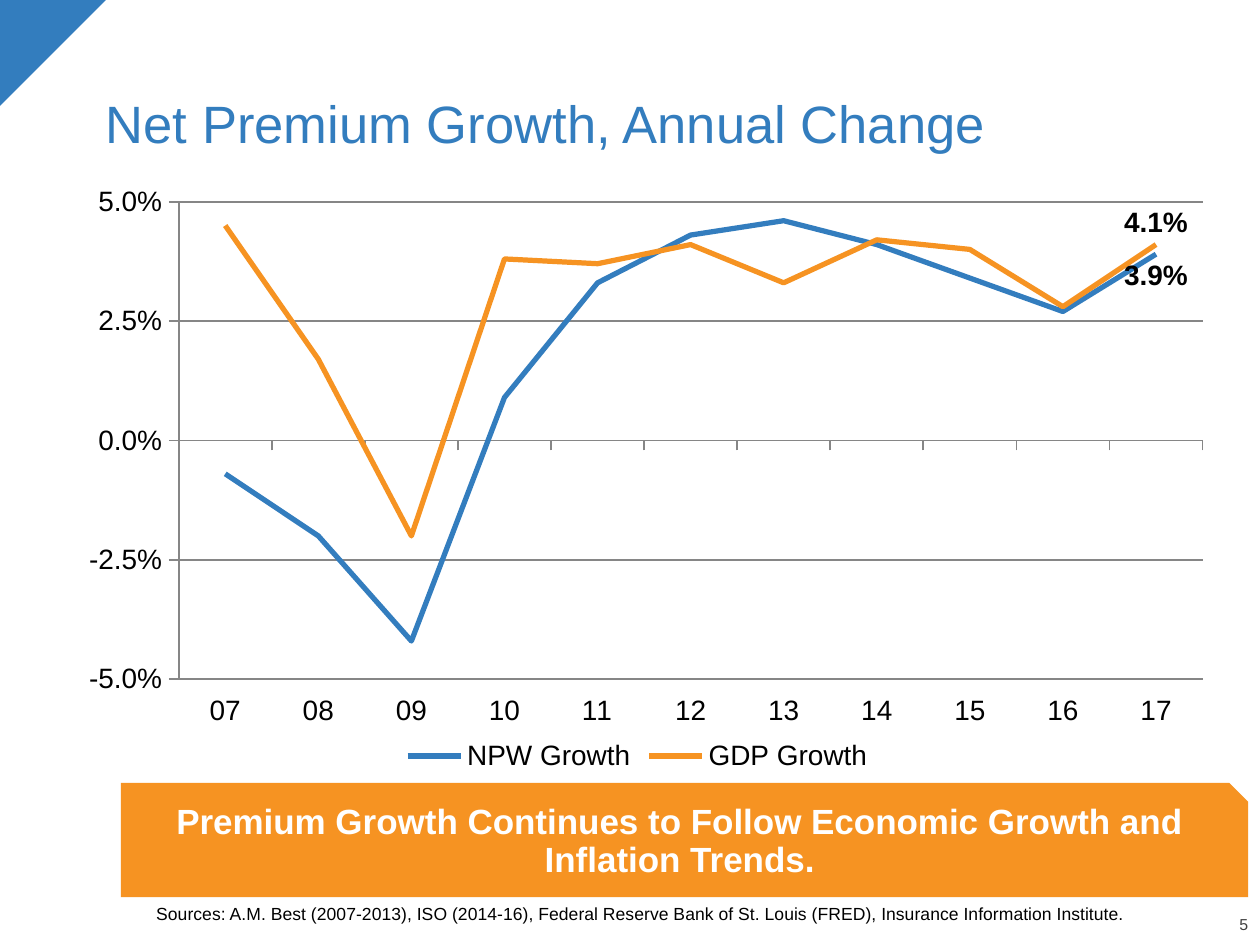
from typing import NamedTuple

from lxml import etree
from pptx import Presentation
from pptx.chart.data import CategoryChartData
from pptx.dml.color import RGBColor
from pptx.enum.chart import (XL_CHART_TYPE, XL_LABEL_POSITION, XL_LEGEND_POSITION,
                             XL_TICK_LABEL_POSITION, XL_TICK_MARK)
from pptx.enum.shapes import MSO_SHAPE
from pptx.enum.text import MSO_ANCHOR, PP_ALIGN
from pptx.oxml.ns import qn
from pptx.util import Inches, Pt

LINE_CHART = XL_CHART_TYPE.LINE
ABOVE, BELOW = XL_LABEL_POSITION.ABOVE, XL_LABEL_POSITION.BELOW
LEGEND_BOTTOM = XL_LEGEND_POSITION.BOTTOM
LABELS_LOW = XL_TICK_LABEL_POSITION.LOW
TICK_OUTSIDE = XL_TICK_MARK.OUTSIDE
RIGHT_TRIANGLE, SNIPPED = MSO_SHAPE.RIGHT_TRIANGLE, MSO_SHAPE.SNIP_1_RECTANGLE
MIDDLE, BOTTOM = MSO_ANCHOR.MIDDLE, MSO_ANCHOR.BOTTOM
LEFT, CENTER, RIGHT = PP_ALIGN.LEFT, PP_ALIGN.CENTER, PP_ALIGN.RIGHT

FONT = "Arial"
COLORS = {"blue": "337DBE", "orange": "F69322", "black": "000000",
          "white": "FFFFFF", "gray": "404040", "axis": "868686"}
PERCENT = "0.0%"
YEARS = [f"{year:02d}" for year in range(7, 18)]
PLOT_AREA = {"x": 0.107, "y": 0.063, "w": 0.877, "h": 0.777}


class Box(NamedTuple):
    left: float
    top: float
    width: float
    height: float

    def lengths(self) -> list:
        return [Inches(value) for value in self]


class TextStyle(NamedTuple):
    size: float
    color: str
    align: PP_ALIGN = LEFT
    anchor: MSO_ANCHOR = BOTTOM
    bold: bool = False
    margins: tuple = (0, 0, 0, 0)


class GrowthSeries(NamedTuple):
    name: str
    values: tuple
    color: str
    label_position: XL_LABEL_POSITION


GROWTH = [
    GrowthSeries("NPW Growth", (-0.007, -0.02, -0.042, 0.009, 0.033, 0.043,
                                0.046, 0.041, 0.034, 0.027, 0.039), "blue", BELOW),
    GrowthSeries("GDP Growth", (0.045, 0.017, -0.02, 0.038, 0.037, 0.041,
                                0.033, 0.042, 0.04, 0.028, 0.041), "orange", ABOVE),
]


def rgb(name: str) -> RGBColor:
    return RGBColor.from_string(COLORS[name])


def set_font(font, size: float, color: str, bold: bool = False) -> None:
    font.name, font.size, font.bold = FONT, Pt(size), bold
    font.color.rgb = rgb(color)


def write_text(shape, text: str, style: TextStyle) -> None:
    frame = shape.text_frame
    frame.text = text
    frame.word_wrap = True
    frame.vertical_anchor = style.anchor
    (frame.margin_left, frame.margin_top,
     frame.margin_right, frame.margin_bottom) = map(Inches, style.margins)
    paragraph = frame.paragraphs[0]
    paragraph.alignment = style.align
    paragraph.line_spacing = 0.9
    paragraph.space_before = Pt(0)
    set_font(paragraph.font, style.size, style.color, style.bold)


def add_filled_shape(slide, kind: MSO_SHAPE, box: Box, color: str):
    shape = slide.shapes.add_shape(kind, *box.lengths())
    shape.shadow.inherit = False
    shape.fill.solid()
    shape.fill.fore_color.rgb = rgb(color)
    shape.line.fill.background()
    return shape


def fix_plot_area(chart) -> None:
    """Pin the inner plot area to fractions of the chart frame."""
    plot_area = chart.plots[0]._element.getparent()
    for layout in plot_area.findall(qn("c:layout")):
        plot_area.remove(layout)
    layout = etree.Element(qn("c:layout"))
    manual = etree.SubElement(layout, qn("c:manualLayout"))
    settings = {"layoutTarget": "inner", "xMode": "edge", "yMode": "edge", **PLOT_AREA}
    for tag, value in settings.items():
        etree.SubElement(manual, qn(f"c:{tag}")).set("val", str(value))
    plot_area.insert(0, layout)


def format_axes(chart) -> None:
    value_axis, category_axis = chart.value_axis, chart.category_axis
    value_axis.minimum_scale, value_axis.maximum_scale = -0.05, 0.05
    value_axis.major_unit = 0.025
    value_axis.has_major_gridlines = True
    value_axis.tick_labels.number_format = PERCENT
    value_axis.tick_labels.number_format_is_linked = False
    category_axis.tick_label_position = LABELS_LOW
    for axis in (value_axis, category_axis):
        axis.major_tick_mark = TICK_OUTSIDE
        set_font(axis.tick_labels.font, 12, "black")
    for line in (value_axis.format.line, category_axis.format.line,
                 value_axis.major_gridlines.format.line):
        line.color.rgb = rgb("axis")
        line.width = Pt(0.75)


def add_growth_chart(slide, box: Box) -> None:
    data = CategoryChartData(number_format=PERCENT)
    data.categories = YEARS
    for growth in GROWTH:
        data.add_series(growth.name, growth.values)
    chart = slide.shapes.add_chart(LINE_CHART, *box.lengths(), data).chart
    set_font(chart.font, 18, "black")
    chart.has_title = False
    chart.has_legend = True
    chart.legend.position = LEGEND_BOTTOM
    chart.legend.include_in_layout = False
    set_font(chart.legend.font, 12, "black")
    chart.plots[0].vary_by_categories = False
    for series, growth in zip(chart.plots[0].series, GROWTH):
        series.smooth = False
        series.format.line.color.rgb = rgb(growth.color)
        series.format.line.width = Pt(2.25)
        label = series.points[len(YEARS) - 1].data_label
        set_font(label.font, 12, "black", bold=True)
        label.position = growth.label_position
    format_axes(chart)
    fix_plot_area(chart)


def main() -> None:
    presentation = Presentation()
    presentation.slide_width = Inches(7.5)
    presentation.slide_height = presentation.slide_width * 3 // 4
    slide = presentation.slides.add_slide(presentation.slide_layouts[5])

    corner = add_filled_shape(slide, RIGHT_TRIANGLE, Box(0, 0, 0.63, 0.63), "blue")
    corner.rotation = 90

    title = slide.shapes.title
    title.left, title.top, title.width, title.height = Box(0.53, 0.19, 5.73, 0.78).lengths()
    write_text(title, "Net Premium Growth, Annual Change",
               TextStyle(22.5, "blue", margins=(0.1, 0.05, 0.1, 0.05)))

    add_growth_chart(slide, Box(0.32, 0.97, 6.95, 3.66))

    banner = add_filled_shape(slide, SNIPPED, Box(0.72, 4.66, 6.71, 0.68), "orange")
    write_text(banner,
               "Premium Growth Continues to Follow Economic Growth and Inflation Trends.",
               TextStyle(15, "white", CENTER, MIDDLE, True, (0.07, 0.04, 0.07, 0.07)))

    sources = slide.shapes.add_textbox(*Box(0.93, 5.16, 6.3, 0.34).lengths())
    write_text(sources,
               "Sources: A.M. Best (2007-2013), ISO (2014-16), Federal Reserve Bank of "
               "St. Louis (FRED), Insurance Information Institute.",
               TextStyle(7.5, "black"))

    page_number = slide.shapes.add_textbox(*Box(7.07, 5.46, 0.36, 0.1).lengths())
    write_text(page_number, "5", TextStyle(6.8, "gray", RIGHT))

    presentation.save("out.pptx")


if __name__ == "__main__":
    main()
